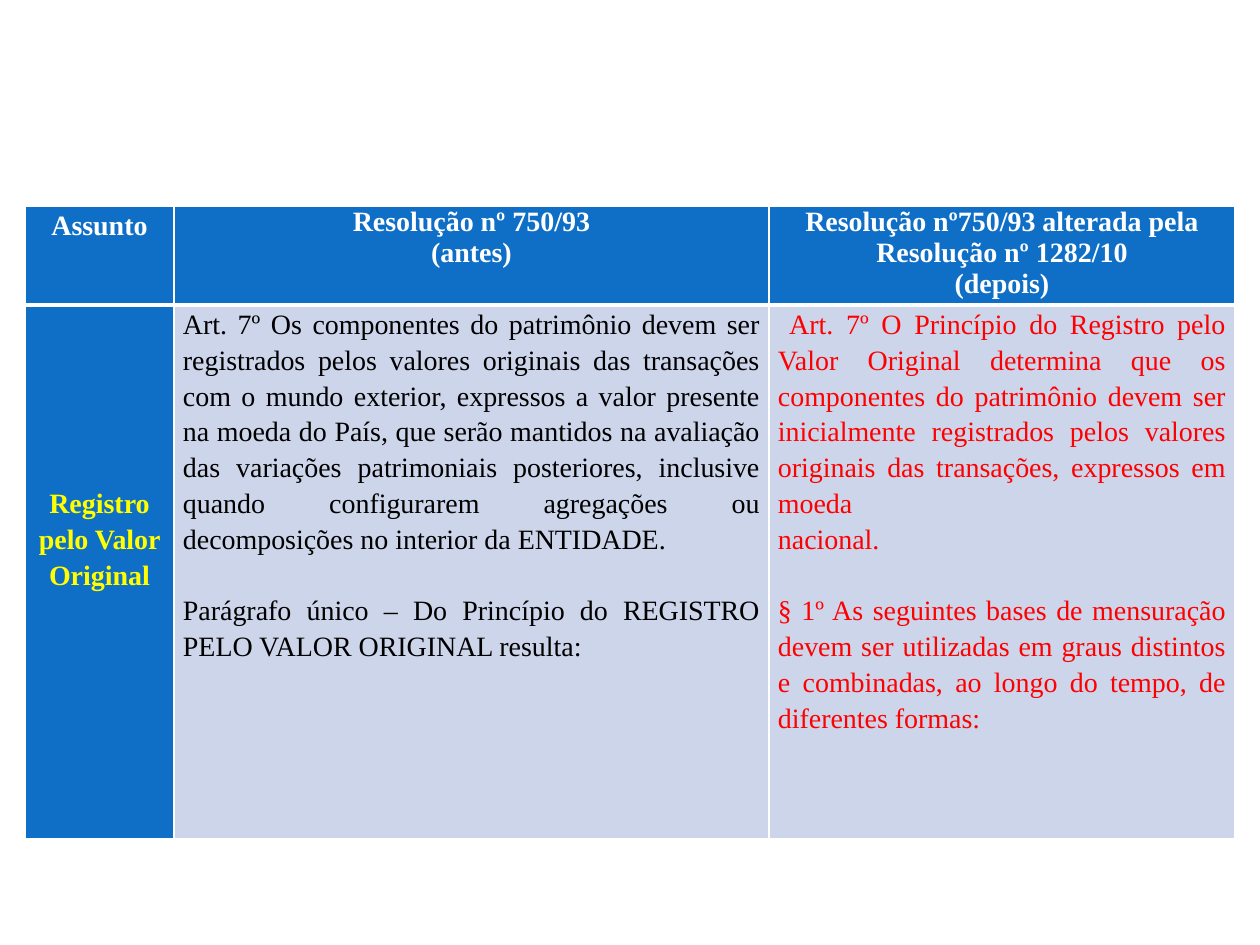
import pptx
import pptx.util
import pptx.dml.color
import pptx.enum.text
import pptx.oxml

SCALE = 914400 / 126
FONT = "Times New Roman"
WHITE, BLACK, RED, YELLOW = "FFFFFF", "000000", "FF0000", "FFFF00"
BLUE, PALE = "0F6FC6", "CCD5EA"
ALIGN = pptx.enum.text.PP_ALIGN

LEFT, TOP = 25, 206
COLS = [149, 595, 466]
ROWS = [99, 534]
PAD = 9
GAP = 20.5  # points, one blank line

# Each cell: paragraphs as (text, space after in points), then its format
HEAD = dict(fill=BLUE, color=WHITE, bold=True)
BODY = dict(fill=PALE, align=ALIGN.JUSTIFY, line=1.15)
CELLS = [
    [
        ([("Assunto", 0)], dict(HEAD, line=1.15)),
        ([("Resolução nº 750/93", 0), ("(antes)", 0)], HEAD),
        ([("Resolução nº750/93 alterada pela", 0),
          ("Resolução nº 1282/10", 0),
          ("(depois)", 0)], HEAD),
    ],
    [
        ([("Registro pelo Valor Original", 0)],
         dict(fill=BLUE, color=YELLOW, bold=True, line=1.15, top=179)),
        ([("Art. 7º Os componentes do patrimônio devem ser registrados pelos "
           "valores originais das transações com o mundo exterior, expressos "
           "a valor presente na moeda do País, que serão mantidos na "
           "avaliação das variações patrimoniais posteriores, inclusive "
           "quando configurarem agregações ou decomposições no interior da "
           "ENTIDADE.", GAP),
          ("Parágrafo único – Do Princípio do REGISTRO PELO VALOR ORIGINAL "
           "resulta:", 0)], dict(BODY, color=BLACK)),
        ([(" Art. 7º O Princípio do Registro pelo Valor Original determina "
           "que os componentes do patrimônio devem ser inicialmente "
           "registrados pelos valores originais das transações, expressos em "
           "moeda", 0),
          ("nacional.", GAP),
          ("§ 1º As seguintes bases de mensuração devem ser utilizadas em "
           "graus distintos e combinadas, ao longo do tempo, de diferentes "
           "formas:", 0)], dict(BODY, color=RED)),
    ],
]


def px(n):
    return pptx.util.Emu(round(n * SCALE))


def rgb(code):
    return pptx.dml.color.RGBColor.from_string(code)


def write(frame, paras, color, bold=False, align=ALIGN.CENTER, line=1.0):
    for i, (text, after) in enumerate(paras):
        para = frame.paragraphs[0] if i == 0 else frame.add_paragraph()
        para.alignment = align
        para.line_spacing = line
        para.space_after = pptx.util.Pt(after)
        run = para.add_run()
        run.text = text
        run.font.name = FONT
        run.font.size = pptx.util.Pt(16)
        run.font.bold = bold
        run.font.color.rgb = rgb(color)


def edge(cell, widths):
    """Draw white borders; widths maps a side (L, R, T, B) to points."""
    props = cell._tc.get_or_add_tcPr()
    for i, (side, width) in enumerate(widths.items()):
        props.insert(i, pptx.oxml.parse_xml(
            '<a:ln%s xmlns:a="http://schemas.openxmlformats.org/drawingml/'
            '2006/main" w="%d"><a:solidFill><a:srgbClr val="%s"/>'
            '</a:solidFill></a:ln%s>' % (side, width * 12700, WHITE, side)))


def fill_cell(cell, paras, fill, top=0, **style):
    cell.margin_left = cell.margin_right = px(PAD)
    cell.margin_top, cell.margin_bottom = px(top), 0
    cell.fill.solid()
    cell.fill.fore_color.rgb = rgb(fill)
    write(cell.text_frame, paras, **style)


def main():
    deck = pptx.Presentation()
    deck.slide_width, deck.slide_height = px(1260), px(945)
    slide = deck.slides.add_slide(deck.slide_layouts[6])
    table = slide.shapes.add_table(
        len(ROWS), len(COLS), px(LEFT), px(TOP),
        px(sum(COLS)), px(sum(ROWS))).table
    for col, width in zip(table.columns, COLS):
        col.width = px(width)
    for row, height in zip(table.rows, ROWS):
        row.height = px(height)
    for r, line in enumerate(CELLS):
        for c, (paras, style) in enumerate(line):
            cell = table.cell(r, c)
            fill_cell(cell, paras, **style)
            edge(cell, dict(L=1, R=1, T=3 if r else 1, B=1 if r else 3))
    deck.save("out.pptx")


if __name__ == "__main__":
    main()
